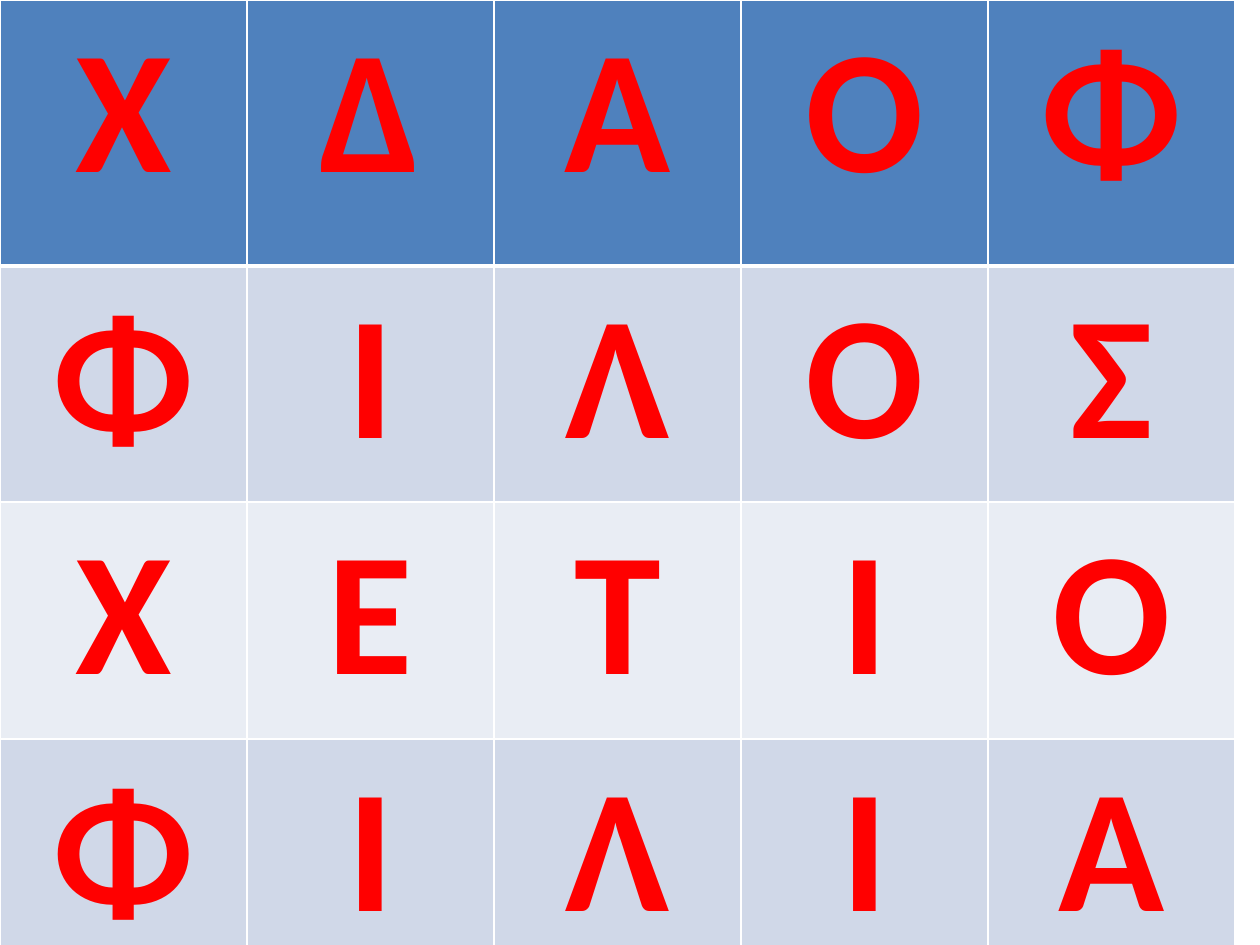
import pptx
import pptx.util
import pptx.dml.color
import pptx.enum.text
import lxml.etree

# Content: one Greek letter per cell
LETTER_ROWS = ["ΧΔΑΟΦ", "ΦΙΛΟΣ", "ΧΕΤΙΟ", "ΦΙΛΙΑ"]
ROW_FILLS = ["4F81BD", "D0D8E8", "E9EDF4", "D0D8E8"]
ROW_HEIGHTS = [266, 236, 237, 236]
COLUMN_WIDTH = 247
LETTER_COLOR = "FF0000"
BORDER_COLOR = "FFFFFF"

PX = 914400 / 126


def px(length):
    return pptx.util.Emu(round(length * PX))


def color(hex_value):
    return pptx.dml.color.RGBColor.from_string(hex_value)


def set_borders(cell, widths):
    """Draw the cell sides, given as points by side; lines precede the fill."""
    properties = cell._tc.get_or_add_tcPr()
    namespace = "{http://schemas.openxmlformats.org/drawingml/2006/main}"
    for index, (side, width) in enumerate(widths.items()):
        line = lxml.etree.Element(namespace + "ln" + side, w=str(pptx.util.Pt(width)))
        fill = lxml.etree.SubElement(line, namespace + "solidFill")
        lxml.etree.SubElement(fill, namespace + "srgbClr", val=BORDER_COLOR)
        properties.insert(index, line)


def fill_cell(cell, letter, fill_color):
    cell.fill.solid()
    cell.fill.fore_color.rgb = color(fill_color)
    para = cell.text_frame.paragraphs[0]
    para.alignment = pptx.enum.text.PP_ALIGN.CENTER
    span = para.add_run()
    span.text = letter
    span.font.name = "Calibri"
    span.font.size = pptx.util.Pt(100)
    span.font.bold = True
    span.font.color.rgb = color(LETTER_COLOR)


def main():
    deck = pptx.Presentation()
    deck.slide_width, deck.slide_height = px(1260), px(945)
    page = deck.slides.add_slide(deck.slide_layouts[6])

    # Letter grid
    column_count = len(LETTER_ROWS[0])
    grid = page.shapes.add_table(
        len(LETTER_ROWS), column_count, 0, 0,
        px(COLUMN_WIDTH * column_count), px(sum(ROW_HEIGHTS))).table
    for column in grid.columns:
        column.width = px(COLUMN_WIDTH)

    # Cells, with a thick rule under the first row
    for row, letters in enumerate(LETTER_ROWS):
        grid.rows[row].height = px(ROW_HEIGHTS[row])
        top = 3 if row == 1 else 1
        bottom = 3 if row == 0 else 1
        for column, letter in enumerate(letters):
            cell = grid.cell(row, column)
            fill_cell(cell, letter, ROW_FILLS[row])
            set_borders(cell, {"L": 1, "R": 1, "T": top, "B": bottom})

    deck.save("out.pptx")


if __name__ == "__main__":
    main()
